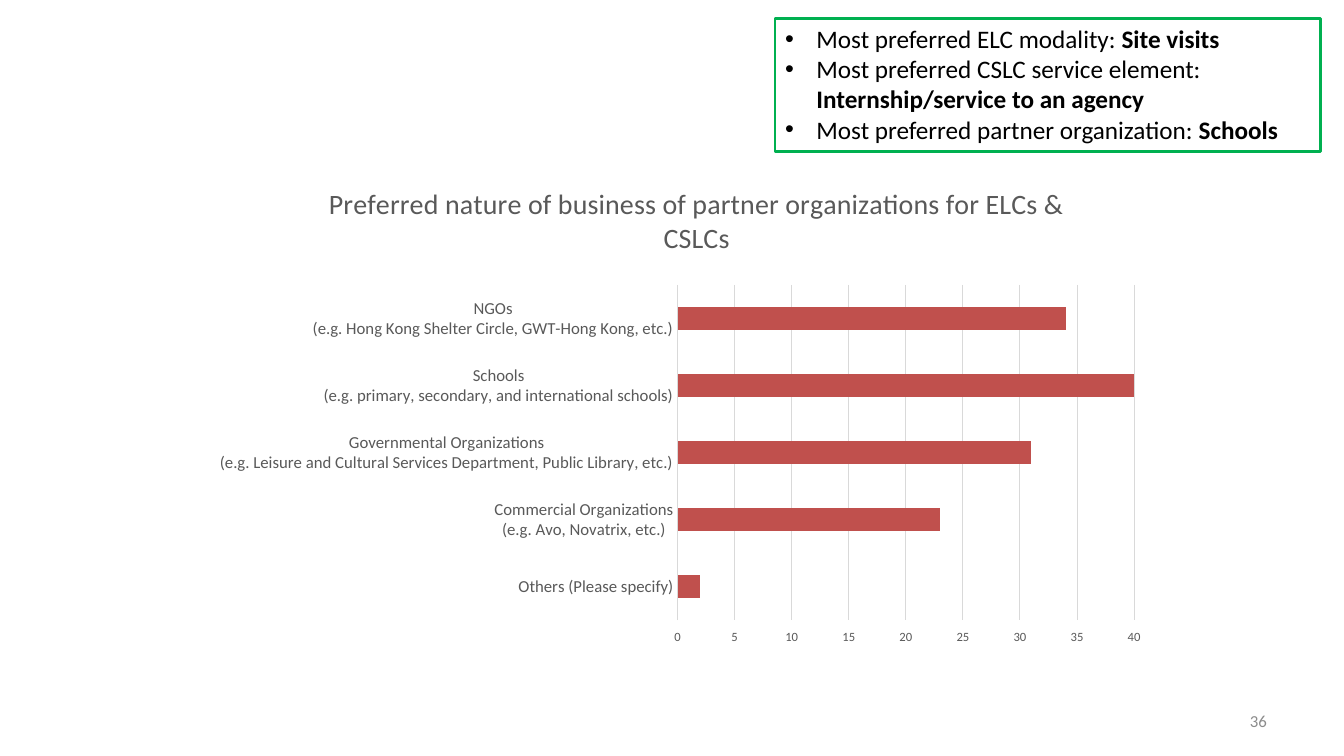
from typing import NamedTuple

from lxml import etree
from pptx import Presentation
from pptx import util as u
from pptx.chart.chart import Chart
from pptx.chart.data import CategoryChartData
from pptx.dml.color import RGBColor
from pptx.enum import chart as charts, text
from pptx.oxml.ns import qn
from pptx.slide import Slide
from pptx.text.text import Font

FONT = "Calibri"
BLACK = RGBColor(0x00, 0x00, 0x00)
WHITE = RGBColor(0xFF, 0xFF, 0xFF)
GREEN = RGBColor(0x00, 0xB0, 0x50)
RED = RGBColor(0xC0, 0x50, 0x4D)
DARK_GREY = RGBColor(0x59, 0x59, 0x59)
MID_GREY = RGBColor(0x8C, 0x8C, 0x8C)
LIGHT_GREY = RGBColor(0xD9, 0xD9, 0xD9)


class Finding(NamedTuple):
    label: str
    answer: str


class Partner(NamedTuple):
    name: str
    votes: int


FINDINGS = [
    Finding("Most preferred ELC modality: ", "Site visits"),
    Finding("Most preferred CSLC service element: ", "Internship/service to an agency"),
    Finding("Most preferred partner organization: ", "Schools"),
]
PARTNERS = [
    Partner("NGOs\n(e.g. Hong Kong Shelter Circle, GWT-Hong Kong, etc.)", 34),
    Partner("Schools\n(e.g. primary, secondary, and international schools)", 40),
    Partner("Governmental Organizations\n(e.g. Leisure and Cultural Services "
            "Department, Public Library, etc.)", 31),
    Partner("Commercial Organizations\n(e.g. Avo, Novatrix, etc.)", 23),
    Partner("Others (Please specify)", 2),
]
CHART_TITLE = "Preferred nature of business of partner organizations for ELCs & CSLCs"
PLOT_AREA = {"x": 0.48, "y": 0.24, "w": 0.48, "h": 0.66}


def style_font(font: Font, size: float, color: RGBColor, bold: bool = False) -> None:
    font.name = FONT
    font.size = u.Pt(size)
    font.bold = bold
    font.color.rgb = color


def add_findings(page: Slide) -> None:
    box = page.placeholders[1]
    box.left, box.top = u.Cm(19.53), u.Cm(0.46)
    box.width, box.height = u.Cm(13.74), u.Cm(3.35)
    box.fill.solid()
    box.fill.fore_color.rgb = WHITE
    box.line.color.rgb = GREEN
    box.line.width = u.Pt(2)
    frame = box.text_frame
    frame.word_wrap = True
    frame.auto_size = text.MSO_AUTO_SIZE.NONE
    frame.vertical_anchor = text.MSO_ANCHOR.TOP
    for index, finding in enumerate(FINDINGS):
        para = frame.paragraphs[0] if index == 0 else frame.add_paragraph()
        properties = para._p.get_or_add_pPr()
        properties.set("marL", str(u.Cm(0.79)))
        properties.set("indent", str(-u.Cm(0.79)))
        bullet = etree.SubElement(properties, qn("a:buChar"))
        bullet.set("char", "•")
        para.space_before = u.Pt(0)
        for words, bold in ((finding.label, False), (finding.answer, True)):
            span = para.add_run()
            span.text = words
            style_font(span.font, 18, BLACK, bold)


def place_plot_area(chart: Chart) -> None:
    """Fix the inner plot area as fractions of the chart."""
    plot_area = chart._chartSpace.find(".//" + qn("c:plotArea"))
    for automatic in plot_area.findall(qn("c:layout")):
        plot_area.remove(automatic)
    layout = etree.Element(qn("c:layout"))
    manual = etree.SubElement(layout, qn("c:manualLayout"))
    settings = {"layoutTarget": "inner", "xMode": "edge", "yMode": "edge", **PLOT_AREA}
    for tag, value in settings.items():
        etree.SubElement(manual, qn(f"c:{tag}")).set("val", str(value))
    plot_area.insert(0, layout)


def add_partner_chart(page: Slide) -> None:
    data = CategoryChartData()
    data.categories = [partner.name for partner in PARTNERS]
    data.add_series("Series 1", [partner.votes for partner in PARTNERS])
    chart = page.shapes.add_chart(
        charts.XL_CHART_TYPE.BAR_CLUSTERED,
        u.Cm(5.54), u.Cm(4.11), u.Cm(24), u.Cm(12.8), data,
    ).chart
    style_font(chart.font, 10, BLACK)
    chart.has_legend = False
    chart.has_title = True
    title = chart.chart_title.text_frame
    title.text = CHART_TITLE
    style_font(title.paragraphs[0].runs[0].font, 20, DARK_GREY)

    plot = chart.plots[0]
    plot.gap_width = 182
    plot.vary_by_categories = False
    bars = plot.series[0].format.fill
    bars.solid()
    bars.fore_color.rgb = RED

    names, votes = chart.category_axis, chart.value_axis
    for axis, size in ((names, 12), (votes, 9)):
        style_font(axis.tick_labels.font, size, DARK_GREY)
        axis.major_tick_mark = charts.XL_TICK_MARK.NONE
        axis.minor_tick_mark = charts.XL_TICK_MARK.NONE
    names.reverse_order = True
    votes.tick_label_position = charts.XL_TICK_LABEL_POSITION.HIGH
    votes.minimum_scale, votes.maximum_scale, votes.major_unit = 0, 40, 5
    votes.has_major_gridlines = True
    votes.format.line.fill.background()
    for line in (names.format.line, votes.major_gridlines.format.line):
        line.color.rgb = LIGHT_GREY
        line.width = u.Pt(0.75)
    place_plot_area(chart)


def add_page_number(page: Slide) -> None:
    box = page.shapes.add_textbox(u.Cm(24.28), u.Cm(17.65), u.Cm(7.9), u.Cm(1.02))
    frame = box.text_frame
    frame.word_wrap = True
    frame.vertical_anchor = text.MSO_ANCHOR.MIDDLE
    frame.text = "36"
    para = frame.paragraphs[0]
    para.alignment = text.PP_ALIGN.RIGHT
    style_font(para.runs[0].font, 12, MID_GREY)


def main() -> None:
    deck = Presentation()
    deck.slide_width, deck.slide_height = u.Cm(33.87), u.Cm(19.05)
    page = deck.slides.add_slide(deck.slide_layouts[1])
    unused_title = page.shapes.title.element
    unused_title.getparent().remove(unused_title)
    add_page_number(page)
    add_partner_chart(page)
    add_findings(page)
    deck.save("out.pptx")


if __name__ == "__main__":
    main()
